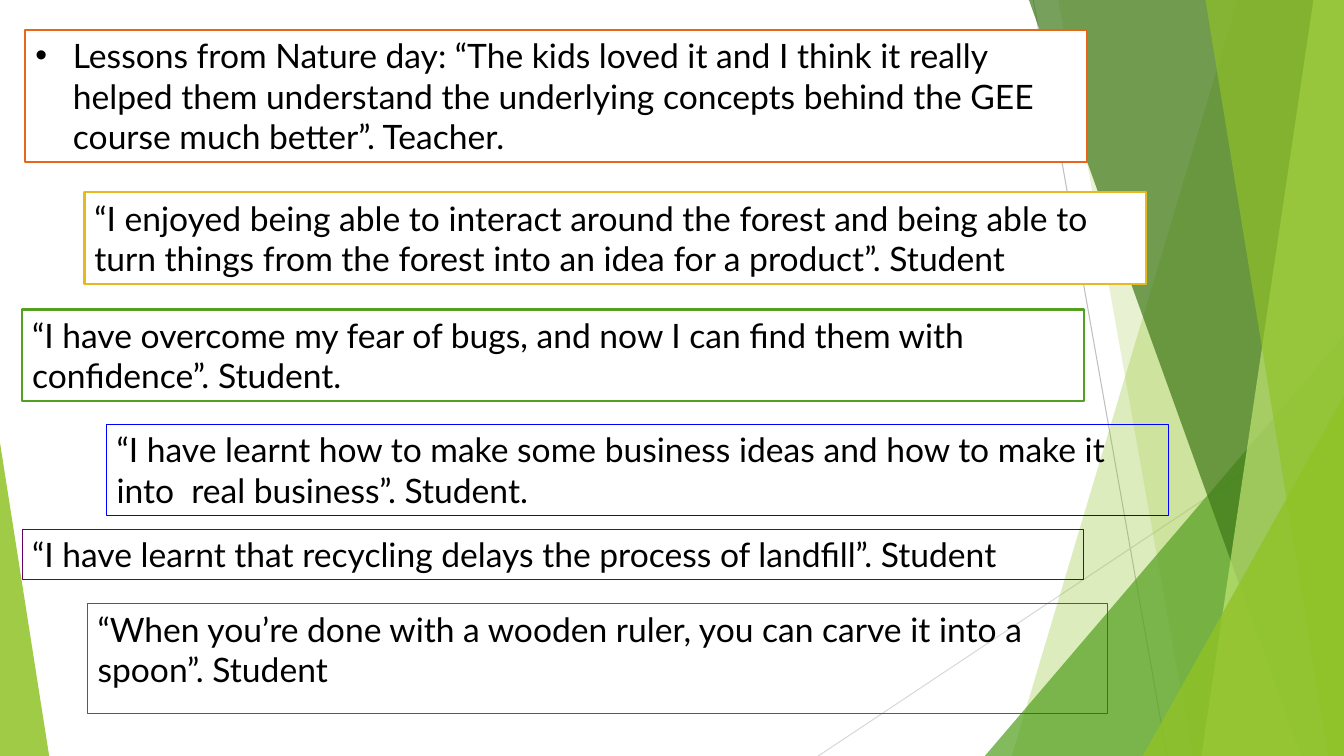
from dataclasses import dataclass
from typing import NamedTuple, Optional

from lxml import etree
from pptx import Presentation
from pptx import util as u
from pptx.dml.color import RGBColor
from pptx.enum import shapes, text
from pptx.oxml import ns

SLIDE_WIDTH, SLIDE_HEIGHT = 33.87, 19.05


@dataclass(frozen=True)
class Theme:
    font: str = "Lato"
    quote_size: int = 24
    thin: float = 0.75
    thick: float = 1.5
    ink: str = "000000"
    paper: str = "FFFFFF"
    lime: str = "90C226"
    pale_lime: str = "C0E474"
    green: str = "54A021"
    dark_green: str = "3F7819"
    orange: str = "E76618"
    gold: str = "E6B91E"
    blue: str = "0000FF"
    purple: str = "660066"
    red: str = "C42F1A"
    grey: str = "BFBFBF"
    light_grey: str = "D9D9D9"


THEME = Theme()


class Ray(NamedTuple):
    start: tuple[float, float]
    end: tuple[float, float]
    color: str


class Veil(NamedTuple):
    """A full-height facet that reaches the right edge of the slide."""
    top_left: float
    bottom_left: float
    color: str
    opacity: int


class Peak(NamedTuple):
    """A right-angled triangle that stands on the bottom edge of the slide."""
    left: float
    top: float
    width: float
    apex: float
    color: str
    opacity: int


class Quote(NamedTuple):
    words: str
    left: float
    top: float
    height: float
    border: str
    width: float = 26.75
    filled: bool = False
    bullet: bool = False


RAYS = [
    Ray((26.04, 0), (29.41, SLIDE_HEIGHT), THEME.grey),
    Ray((SLIDE_WIDTH, 10.24), (20.62, SLIDE_HEIGHT), THEME.light_grey),
]

FACETS = [
    Veil(31.19, 25.5, THEME.lime, 30),
    Veil(26.67, 30.05, THEME.lime, 20),
    Peak(24.82, 8.46, 9.05, 1, THEME.green, 72),
    Veil(25.93, 32.79, THEME.dark_green, 70),
    Veil(33.1, 30.28, THEME.pale_lime, 70),
    Veil(30.38, 33.48, THEME.lime, 65),
    Peak(28.8, 9.98, 5.07, 1, THEME.lime, 80),
    Peak(0, 11.15, 1.24, 0, THEME.lime, 85),
]

QUOTES = [
    Quote("“When you’re done with a wooden ruler, you can carve it into a spoon”. Student",
          2.21, 15.21, 2.77, THEME.red, width=25.7),
    Quote("Lessons from Nature day: “The kids loved it and I think it really helped them "
          "understand the underlying concepts behind the GEE course much better”. Teacher.",
          0.64, 0.76, 3.33, THEME.orange, filled=True, bullet=True),
    Quote("“I enjoyed being able to interact around the forest and being able to turn things "
          "from the forest into an idea for a product”. Student",
          2.13, 4.85, 2.31, THEME.gold, filled=True),
    Quote("“I have learnt how to make some business ideas and how to make it into  real "
          "business”. Student.",
          2.69, 10.69, 2.31, THEME.blue),
    Quote("“I have learnt that recycling delays the process of landfill”. Student",
          0.56, 13.34, 1.27, THEME.purple),
    Quote("“I have overcome my fear of bugs, and now I can find them with confidence”. Student.",
          0.56, 7.8, 2.31, THEME.green, filled=True),
]


def draw_ray(slide, ray: Ray) -> None:
    points = [u.Cm(value) for value in (*ray.start, *ray.end)]
    connector = slide.shapes.add_connector(shapes.MSO_CONNECTOR.STRAIGHT, *points)
    connector.line.color.rgb = RGBColor.from_string(ray.color)
    connector.line.width = u.Pt(THEME.thin)
    etree.SubElement(connector.element.spPr, ns.qn("a:effectLst"))


def fill_translucent(shape, color: str, opacity: int) -> None:
    shape.shadow.inherit = False
    shape.line.fill.background()
    shape.fill.solid()
    shape.fill.fore_color.rgb = RGBColor.from_string(color)
    color_element = shape.element.spPr.find(f".//{ns.qn('a:srgbClr')}")
    etree.SubElement(color_element, ns.qn("a:alpha"), val=str(opacity * 1000))


def draw_veil(slide, veil: Veil) -> None:
    right, bottom = u.Cm(SLIDE_WIDTH), u.Cm(SLIDE_HEIGHT)
    builder = slide.shapes.build_freeform(u.Cm(veil.top_left), 0)
    builder.add_line_segments([(right, 0), (right, bottom), (u.Cm(veil.bottom_left), bottom)])
    fill_translucent(builder.convert_to_shape(), veil.color, veil.opacity)


def draw_peak(slide, peak: Peak) -> None:
    triangle = slide.shapes.add_shape(
        shapes.MSO_SHAPE.ISOSCELES_TRIANGLE, u.Cm(peak.left), u.Cm(peak.top),
        u.Cm(peak.width), u.Cm(SLIDE_HEIGHT - peak.top))
    triangle.adjustments[0] = peak.apex
    fill_translucent(triangle, peak.color, peak.opacity)


def write_text(frame, words: str, *, size: float, color: str, font: str,
               bullet: Optional[str] = None, indent: float = 0.95) -> None:
    frame.word_wrap = True
    frame.vertical_anchor = text.MSO_ANCHOR.TOP
    paragraph = frame.paragraphs[0]
    paragraph.alignment = text.PP_ALIGN.LEFT
    if bullet:
        properties = paragraph._p.get_or_add_pPr()
        properties.set("marL", str(u.Cm(indent)))
        properties.set("indent", str(-u.Cm(indent)))
        etree.SubElement(properties, ns.qn("a:buFont"), typeface="Arial")
        etree.SubElement(properties, ns.qn("a:buChar"), char=bullet)
    run = paragraph.add_run()
    run.text = words
    run.font.name = font
    run.font.size = u.Pt(size)
    run.font.color.rgb = RGBColor.from_string(color)


def draw_quote(slide, quote: Quote) -> None:
    box = slide.shapes.add_textbox(
        u.Cm(quote.left), u.Cm(quote.top), u.Cm(quote.width), u.Cm(quote.height))
    if quote.filled:
        box.fill.solid()
        box.fill.fore_color.rgb = RGBColor.from_string(THEME.paper)
    box.line.color.rgb = RGBColor.from_string(quote.border)
    box.line.width = u.Pt(THEME.thick if quote.filled else THEME.thin)
    write_text(box.text_frame, quote.words, size=THEME.quote_size, color=THEME.ink,
               font=THEME.font, bullet="•" if quote.bullet else None)


def main() -> None:
    presentation = Presentation()
    presentation.slide_width = u.Cm(SLIDE_WIDTH)
    presentation.slide_height = u.Cm(SLIDE_HEIGHT)
    slide = presentation.slides.add_slide(presentation.slide_layouts[6])
    for ray in RAYS:
        draw_ray(slide, ray)
    for facet in FACETS:
        if isinstance(facet, Veil):
            draw_veil(slide, facet)
        else:
            draw_peak(slide, facet)
    for quote in QUOTES:
        draw_quote(slide, quote)
    presentation.save("out.pptx")


if __name__ == "__main__":
    main()
